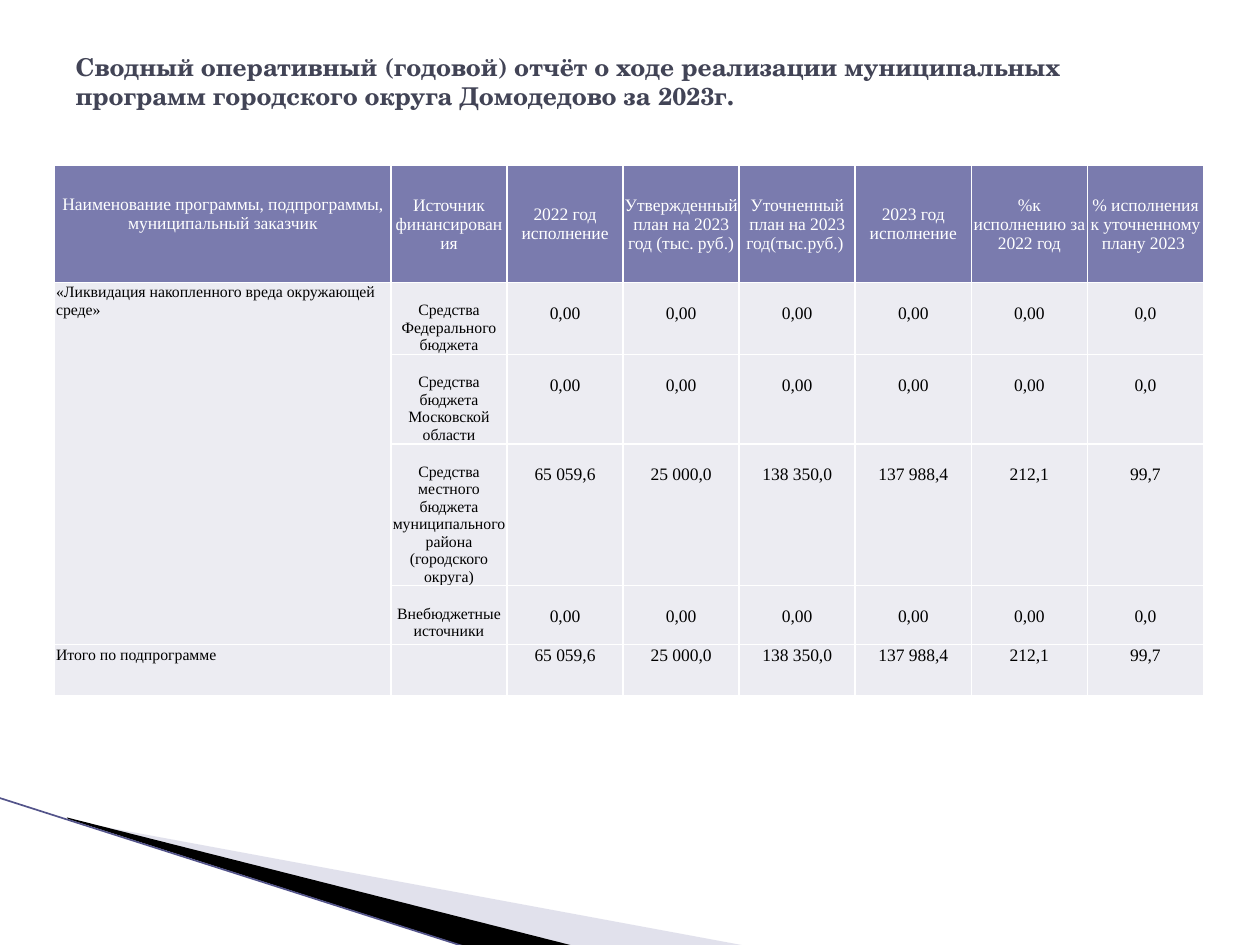
from lxml.etree import SubElement
from pptx import Presentation
from pptx.dml.color import RGBColor as Rgb
from pptx.enum.shapes import MSO_CONNECTOR as Link
from pptx.enum.text import MSO_ANCHOR as Anchor, PP_ALIGN as Align
from pptx.oxml.ns import qn
from pptx.util import Cm, Pt

HUES = {"title": "424456", "head": "7A7BAE", "body": "ECECF2", "white": "FFFFFF",
        "black": "000000", "pale": "B6B6D1", "edge": "53548A"}
TITLE = ("Сводный оперативный (годовой) отчёт о ходе реализации муниципальных "
         "программ городского округа Домодедово за 2023г.")
HEADS = ["Наименование программы, подпрограммы, муниципальный заказчик",
         "Источник финансирования", "2022 год исполнение",
         "Утвержденный план на 2023 год (тыс. руб.)",
         "Уточненный план на 2023 год(тыс.руб.) ", "2023 год исполнение",
         "%к исполнению за 2022 год", "% исполнения к уточненному плану 2023 "]
NONE = ["0,00"] * 5 + ["0,0"]
SUMS = ["65 059,6", "25 000,0", "138 350,0", "137 988,4", "212,1", "99,7"]
ROWS = [
    HEADS,
    ["«Ликвидация накопленного вреда окружающей среде»",
     "Средства Федерального бюджета"] + NONE,
    ["", "Средства бюджета Московской области"] + NONE,
    ["", "Средства местного бюджета муниципального района (городского округа)"] + SUMS,
    ["", "Внебюджетные источники"] + NONE,
    ["Итого по подпрограмме", ""] + SUMS,
]
WIDTHS = [6.78] + [2.34] * 7
HEIGHTS = [2.36, 1.35, 1.35, 1.35, 1.19, 1.02]
LAST = len(ROWS) - 1
WEDGES = [
    ("pale", 40, [(1.4, 16.54), (15.11, 19.08), (11.58, 19.08), (1.4, 16.51)]),
    ("black", 100, [(1.35, 16.48), (11.61, 19.08), (9.45, 19.1), (1.37, 16.51)]),
]


def rgb(name):
    return Rgb.from_string(HUES[name])


def style(frame, size, hue, face, bold=False):
    for par in frame.paragraphs:
        for run in par.runs:
            font = run.font
            font.size, font.name, font.bold = Pt(size), face, bold
            font.color.rgb = rgb(hue)


def wedge(slide, hue, alpha, spots):
    spots = [(Cm(x), Cm(y)) for x, y in spots]
    pen = slide.shapes.build_freeform(*spots[0])
    pen.add_line_segments(spots[1:], close=True)
    shape = pen.convert_to_shape()
    shape.shadow.inherit = False
    shape.fill.solid()
    shape.fill.fore_color.rgb = rgb(hue)
    shape.line.fill.background()
    if alpha < 100:
        tint = shape.element.spPr.find(f"{qn('a:solidFill')}/{qn('a:srgbClr')}")
        SubElement(tint, qn("a:alpha"), val=str(alpha * 1000))


def border(cell):
    props = cell._tc.get_or_add_tcPr()
    for side in ("lnL", "lnR", "lnT", "lnB"):
        line = SubElement(props, qn(f"a:{side}"), w=str(Pt(1)))
        fill = SubElement(line, qn("a:solidFill"))
        SubElement(fill, qn("a:srgbClr"), val=HUES["white"])


def fill_cell(cell, text, row, col):
    head = row == 0
    size = 10 if head or col > 1 else 9
    drop = 0 < row < LAST and col > 0
    cell.text_frame.text = text
    style(cell.text_frame, size, "white" if head else "black", "Times New Roman")
    if head or col > 0:
        cell.text_frame.paragraphs[0].alignment = Align.CENTER
    cell.vertical_anchor = Anchor.MIDDLE if head else Anchor.TOP
    cell.margin_left = cell.margin_right = Cm(0.03)
    cell.margin_top = Cm(0.03) + (Pt(size * 1.15) if drop else 0)
    cell.margin_bottom = Pt(size * 1.15) if head and col == 0 else 0
    border(cell)
    cell.fill.solid()
    cell.fill.fore_color.rgb = rgb("head" if head else "body")


def add_grid(slide):
    grid = slide.shapes.add_table(len(ROWS), len(HEADS), Cm(1.1), Cm(3.33),
                                  Cm(sum(WIDTHS)), Cm(sum(HEIGHTS))).table
    for col, width in zip(grid.columns, WIDTHS):
        col.width = Cm(width)
    for row, high in zip(grid.rows, HEIGHTS):
        row.height = Cm(high)
    for r, row in enumerate(ROWS):
        for c, text in enumerate(row):
            fill_cell(grid.cell(r, c), text, r, c)
    grid.cell(1, 0).merge(grid.cell(LAST - 1, 0))


def main():
    deck = Presentation()
    deck.slide_width, deck.slide_height = Cm(25.4), Cm(19.05)
    slide = deck.slides.add_slide(deck.slide_layouts[5])
    for item in WEDGES:
        wedge(slide, *item)
    edge = slide.shapes.add_connector(Link.STRAIGHT, Cm(-0.03), Cm(16.08), Cm(9.42), Cm(19.1))
    edge.line.color.rgb = rgb("edge")
    edge.line.width = Pt(0.95)
    SubElement(edge.element.spPr, qn("a:effectLst"))
    title = slide.shapes.title
    title.left, title.top, title.width, title.height = Cm(1.27), Cm(0.76), Cm(22.86), Cm(1.75)
    frame = title.text_frame
    frame.text = TITLE
    frame.word_wrap = True
    frame.vertical_anchor = Anchor.MIDDLE
    frame.paragraphs[0].alignment = Align.LEFT
    style(frame, 14, "title", "TeX Gyre Schola", True)
    add_grid(slide)
    deck.save("out.pptx")


if __name__ == "__main__":
    main()
